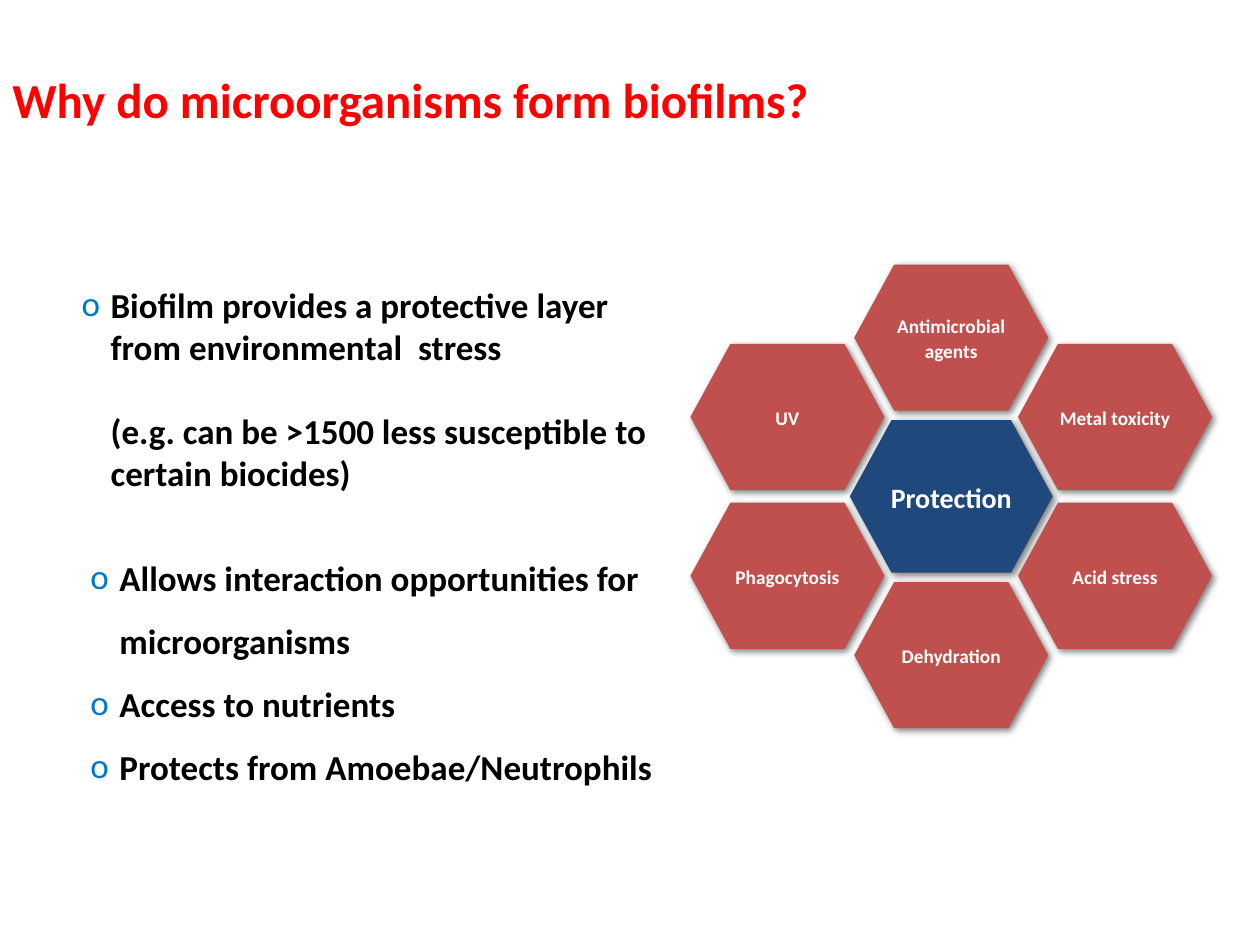
from lxml import etree
from pptx import Presentation
from pptx.dml.color import RGBColor
from pptx.enum.shapes import MSO_SHAPE as Shape
from pptx.enum.text import MSO_ANCHOR as Anchor, PP_ALIGN as Align
from pptx.oxml.ns import qn
from pptx.util import Inches, Pt

COLORS = {
    "title": "FF0000",
    "text": "000000",
    "bullet": "0078C8",
    "threat": "C0504D",
    "core": "1F497D",
    "label": "FFFFFF",
    "shadow": "000000",
}
FONT = "Calibri"

TITLE = "Why do microorganisms form biofilms?"

# text, left margin, bulleted, line spacing, space before
REASONS = [
    ("Biofilm provides a protective layer from environmental  stress", 0.61, True, 1, 0),
    ("(e.g. can be >1500 less susceptible to certain biocides)", 0.61, False, 1, 24),
    ("Allows interaction opportunities for microorganisms", 0.68, True, 1.5, 24),
    ("Access to nutrients", 0.68, True, 1.5, 0),
    ("Protects from Amoebae/Neutrophils", 0.68, True, 1.5, 0),
]
HANGING = 0.23

CENTER_X, CENTER_Y = 7.55, 3.94
COLUMN_STEP, ROW_STEP = 1.3, 0.63
THREAT_SIZE = (1.54, 1.16)
CORE_SIZE = (1.61, 1.21)

# label, column, row, size, fill, font size
HEXAGONS = [
    ("Antimicrobial agents", 0, -2, THREAT_SIZE, "threat", 11),
    ("Dehydration", 0, 2, THREAT_SIZE, "threat", 11),
    ("Protection", 0, 0, CORE_SIZE, "core", 16),
    ("Metal toxicity", 1, -1, THREAT_SIZE, "threat", 11),
    ("UV", -1, -1, THREAT_SIZE, "threat", 11),
    ("Acid stress", 1, 1, THREAT_SIZE, "threat", 11),
    ("Phagocytosis", -1, 1, THREAT_SIZE, "threat", 11),
]


def color(name):
    return RGBColor.from_string(COLORS[name])


def style(para, size, name):
    for span in para.runs:
        span.font.name = FONT
        span.font.size = Pt(size)
        span.font.bold = True
        span.font.color.rgb = color(name)


def add_box(slide, left, top, width, height):
    box = slide.shapes.add_textbox(Inches(left), Inches(top), Inches(width), Inches(height))
    box.text_frame.word_wrap = True
    return box.text_frame


def set_indent(para, left, bulleted):
    props = para._p.get_or_add_pPr()
    props.set("marL", str(Inches(left)))
    props.set("indent", str(Inches(-HANGING if bulleted else 0)))
    if bulleted:
        tint = etree.SubElement(props, qn("a:buClr"))
        etree.SubElement(tint, qn("a:srgbClr"), val=COLORS["bullet"])
        etree.SubElement(props, qn("a:buFont"), typeface=FONT)
        etree.SubElement(props, qn("a:buChar"), char="o")


def add_shadow(shape):
    shape.shadow.inherit = False
    effects = shape._element.spPr.find(qn("a:effectLst"))
    outer = etree.SubElement(effects, qn("a:outerShdw"), blurRad=str(Pt(4)),
                             dist=str(Pt(2)), dir=str(45 * 60000), rotWithShape="0")
    tint = etree.SubElement(outer, qn("a:srgbClr"), val=COLORS["shadow"])
    etree.SubElement(tint, qn("a:alpha"), val="50000")


def add_title(slide):
    frame = add_box(slide, 0, 0.5, 10, 0.76)
    frame.text = TITLE
    style(frame.paragraphs[0], 28, "title")


def add_reasons(slide):
    frame = add_box(slide, 0.17, 2.2, 5.17, 4.98)
    for index, (text, left, bulleted, spacing, before) in enumerate(REASONS):
        para = frame.add_paragraph() if index else frame.paragraphs[0]
        para.text = text
        set_indent(para, left, bulleted)
        para.line_spacing = spacing
        para.space_before = Pt(before)
        style(para, 20, "text")


def add_hexagons(slide):
    group = slide.shapes.add_group_shape()
    for label, column, row, (width, height), fill, size in HEXAGONS:
        left = CENTER_X + column * COLUMN_STEP - width / 2
        top = CENTER_Y + row * ROW_STEP - height / 2
        hexagon = group.shapes.add_shape(Shape.HEXAGON, Inches(left), Inches(top),
                                         Inches(width), Inches(height))
        hexagon.adjustments[0] = 0.273
        hexagon.fill.solid()
        hexagon.fill.fore_color.rgb = color(fill)
        hexagon.line.fill.background()
        add_shadow(hexagon)
        frame = hexagon.text_frame
        frame.word_wrap = True
        frame.vertical_anchor = Anchor.MIDDLE
        frame.margin_left = frame.margin_right = Inches(0.06)
        frame.margin_top = frame.margin_bottom = 0
        frame.text = label
        para = frame.paragraphs[0]
        para.alignment = Align.CENTER
        para.line_spacing = 1.05
        style(para, size, "label")


def main():
    deck = Presentation()
    deck.slide_width, deck.slide_height = Inches(10), Inches(7.5)
    page = deck.slides.add_slide(deck.slide_layouts[6])
    add_title(page)
    add_reasons(page)
    add_hexagons(page)
    deck.save("out.pptx")


if __name__ == "__main__":
    main()
